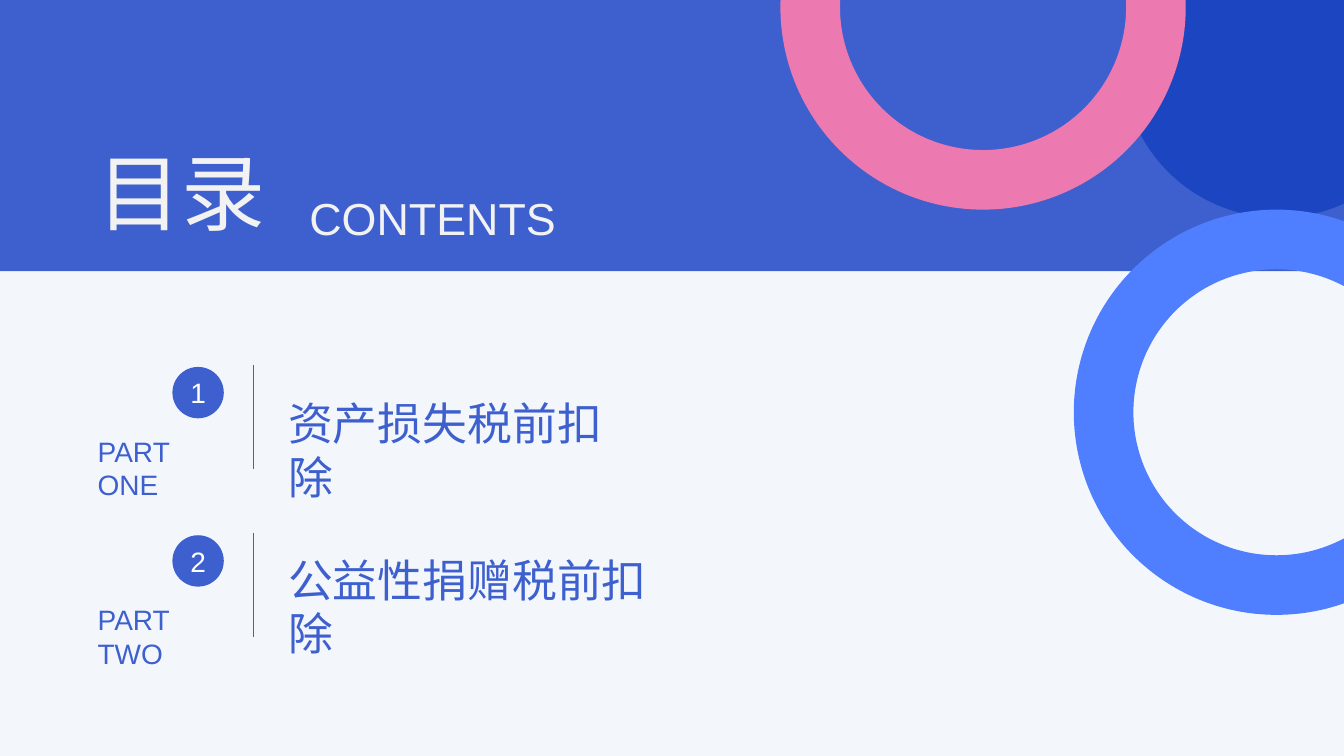
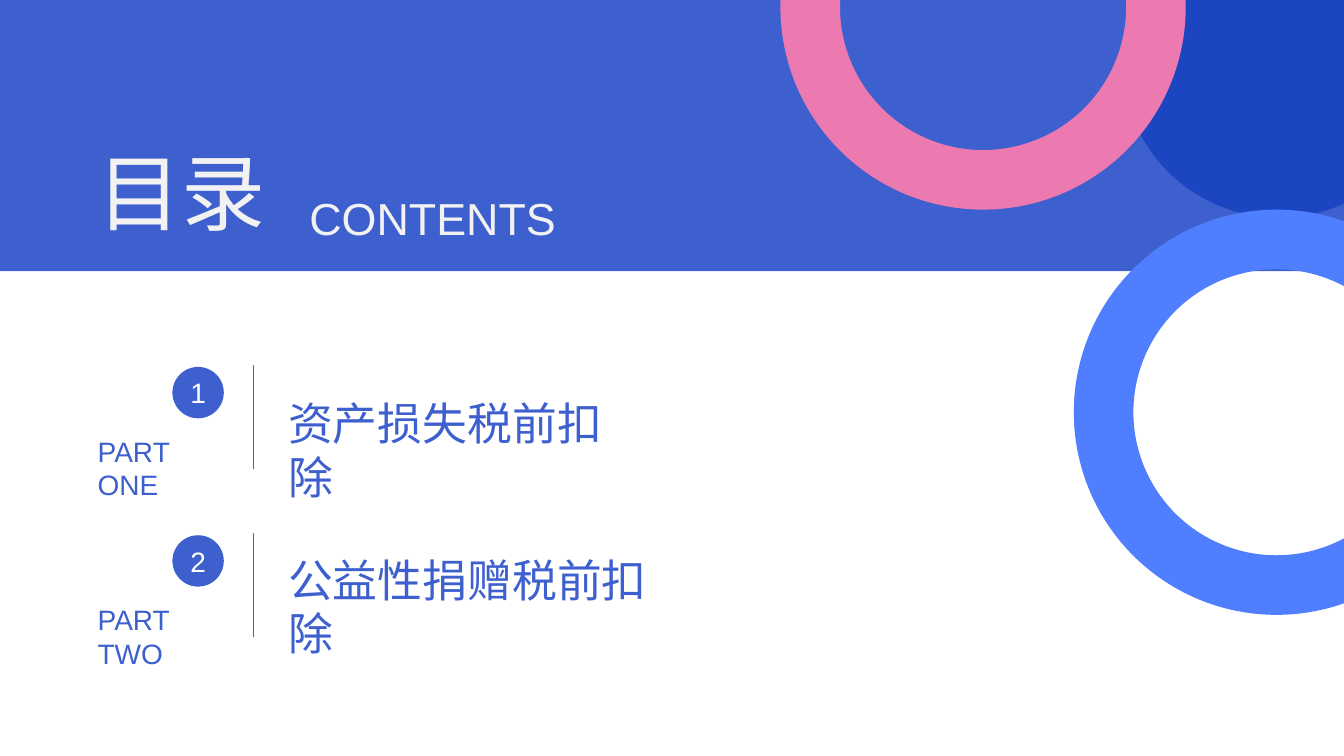
from lxml import etree
from pptx import Presentation
from pptx.dml.color import RGBColor
from pptx.enum.shapes import MSO_CONNECTOR, MSO_SHAPE
from pptx.enum.text import MSO_ANCHOR, MSO_AUTO_SIZE, PP_ALIGN
from pptx.oxml.ns import qn
from pptx.util import Inches, Pt

# Shared style
BLUE = RGBColor(0x3E, 0x60, 0xCE)
DEEP_BLUE = RGBColor(0x1C, 0x45, 0xC1)
BRIGHT_BLUE = RGBColor(0x4F, 0x7E, 0xFF)
PINK = RGBColor(0xEC, 0x79, 0xB0)
OFF_WHITE = RGBColor(0xF2, 0xF2, 0xF2)
WHITE = RGBColor(0xFF, 0xFF, 0xFF)
PALE_BLUE = RGBColor(0xF3, 0xF7, 0xFC)
LATIN_FONT, CHINESE_FONT = "Arial", "Noto Sans CJK SC"
RING_SIZE, RING_THICKNESS = 4.02, 0.147

# Content: number, part label, label width, heading, heading top and width
BACKGROUNDS = [PALE_BLUE, WHITE]
PARTS = [
    ("1", "PART ONE", 1.59, "资产损失税前扣除", 3.88, 3.76),
    ("2", "PART TWO", 1.63, "公益性捐赠税前扣除", 5.43, 4.2),
]
FIRST_PART_TOP, PART_STEP = 3.62, 1.67


def write(shape, text, size, color, font=LATIN_FONT, align=PP_ALIGN.LEFT):
    paragraph = shape.text_frame.paragraphs[0]
    paragraph.alignment = align
    run = paragraph.add_run()
    run.text = text
    run.font.size = Pt(size)
    run.font.name = font
    run.font.color.rgb = color
    east_asian = etree.SubElement(run.font._element, qn("a:ea"))
    east_asian.set("typeface", font)


def add_text(slide, box, text, size, color, wrap=True):
    shape = slide.shapes.add_textbox(*map(Inches, box))
    shape.text_frame.word_wrap = wrap
    if wrap:
        shape.text_frame.margin_right = Inches(0.3)
    write(shape, text, size, color)


def add_filled(slide, kind, box, color):
    shape = slide.shapes.add_shape(kind, *map(Inches, box))
    shape.shadow.inherit = False
    shape.fill.solid()
    shape.fill.fore_color.rgb = color
    shape.line.fill.background()
    return shape


def add_ring(slide, left, top, color):
    ring = add_filled(slide, MSO_SHAPE.DONUT, (left, top, RING_SIZE, RING_SIZE), color)
    ring.adjustments[0] = RING_THICKNESS
    return ring


def add_header(slide):
    title = slide.shapes.title
    # Band and circles lie behind the title
    for shape in (
        add_filled(slide, MSO_SHAPE.RECTANGLE, (0, 0, 13.33, 2.69), BLUE),
        add_filled(slide, MSO_SHAPE.OVAL, (11.13, -0.95, 3.11, 3.11), DEEP_BLUE),
        add_ring(slide, 7.74, -1.94, PINK),
    ):
        title.element.addprevious(shape.element)
    title.left, title.top, title.width, title.height = map(Inches, (0.87, 1.34, 2.1, 1.11))
    title.text_frame.vertical_anchor = MSO_ANCHOR.TOP
    title.text_frame.auto_size = MSO_AUTO_SIZE.NONE
    write(title, "目录", 60, OFF_WHITE, CHINESE_FONT, PP_ALIGN.JUSTIFY)
    add_text(slide, (2.97, 1.84, 2.67, 0.64), "CONTENTS", 32, OFF_WHITE, wrap=False)


def add_part(slide, top, number, label, label_width, heading, heading_top, heading_width):
    badge = add_filled(slide, MSO_SHAPE.OVAL, (1.71, top + 0.02, 0.51, 0.51), BLUE)
    frame = badge.text_frame
    frame.margin_left = frame.margin_right = frame.margin_top = frame.margin_bottom = 0
    frame.vertical_anchor = MSO_ANCHOR.MIDDLE
    write(badge, number, 20, WHITE, align=PP_ALIGN.CENTER)
    add_text(slide, (0.87, top + 0.64, label_width, 0.43), label, 20, BLUE)
    divider = slide.shapes.add_connector(
        MSO_CONNECTOR.STRAIGHT, *map(Inches, (2.51, top, 2.51, top + 1.03)))
    divider.line.color.rgb = BLUE
    divider.line.width = Pt(0.5)
    etree.SubElement(divider.element.spPr, qn("a:effectLst"))
    add_text(slide, (2.76, heading_top, heading_width, 0.63), heading, 32, BLUE)


def main():
    presentation = Presentation()
    presentation.slide_width, presentation.slide_height = Inches(13.33), Inches(7.5)
    for background in BACKGROUNDS:
        slide = presentation.slides.add_slide(presentation.slide_layouts[5])
        slide.background.fill.solid()
        slide.background.fill.fore_color.rgb = background
        add_header(slide)
        for index, part in enumerate(PARTS):
            add_part(slide, FIRST_PART_TOP + index * PART_STEP, *part)
        add_ring(slide, 10.65, 2.08, BRIGHT_BLUE)
    presentation.save("out.pptx")


if __name__ == "__main__":
    main()
